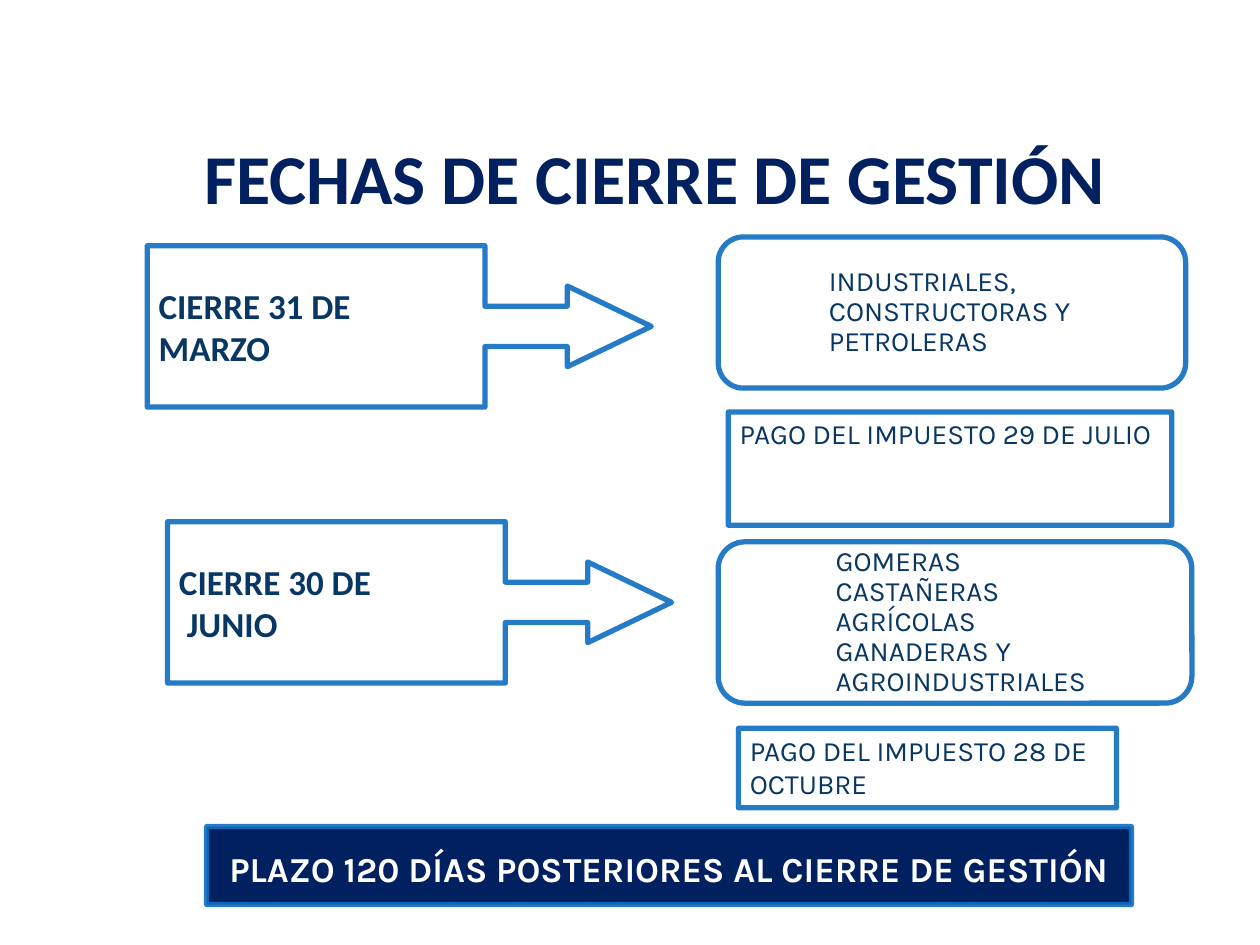
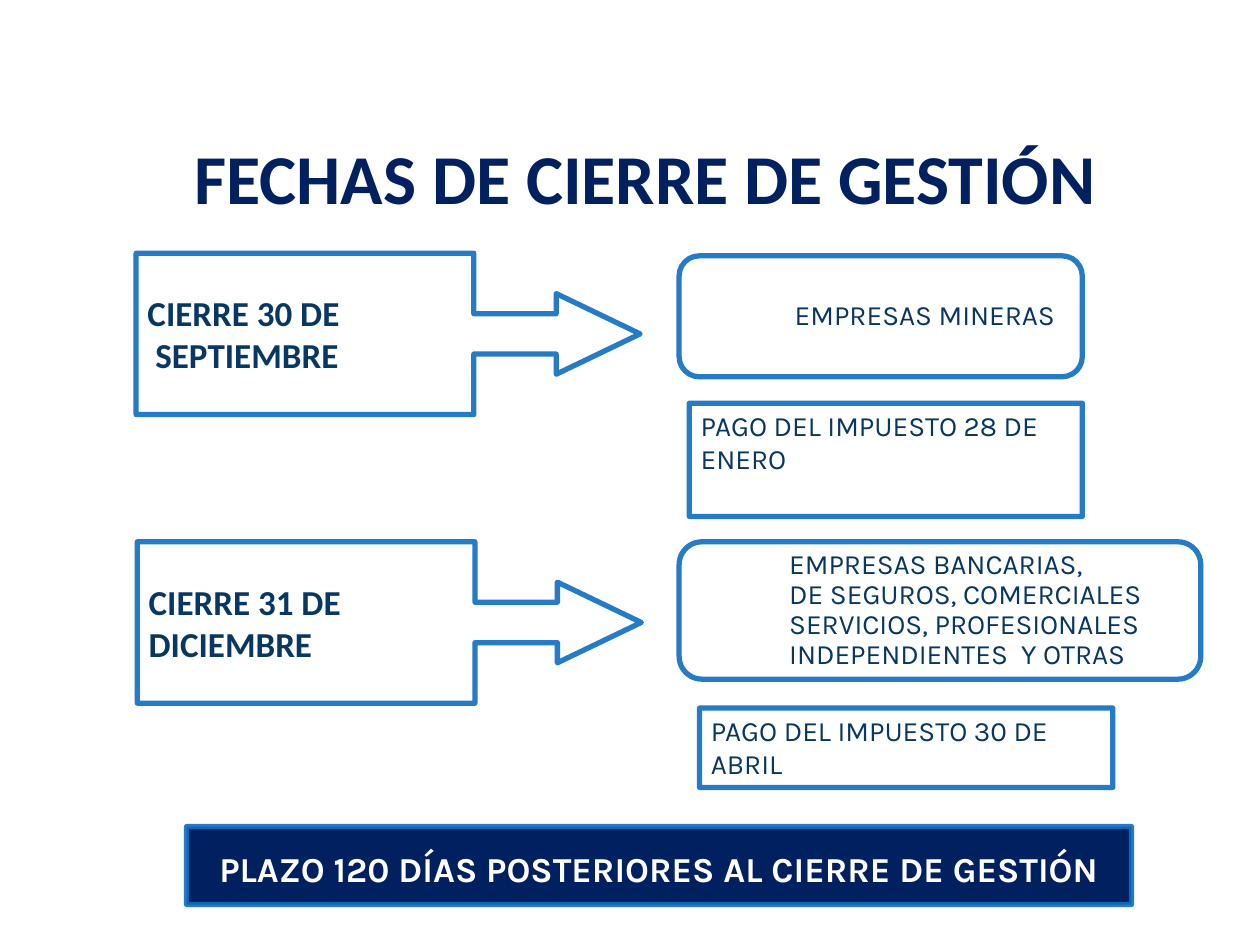
import pptx
import pptx.dml.color
import pptx.enum.shapes
import pptx.enum.text
import pptx.oxml.ns
import pptx.util
from lxml import etree

Pt = pptx.util.Pt
Shapes = pptx.enum.shapes.MSO_SHAPE
Align = pptx.enum.text.PP_ALIGN
Anchor = pptx.enum.text.MSO_ANCHOR

TITLE = "FECHAS DE CIERRE DE GESTIÓN"
DEADLINE = "PLAZO 120 DÍAS POSTERIORES AL CIERRE DE GESTIÓN"

SLIDES = [
    {
        "title_span": (95.8, 556.6),
        "deadline_span": (118.1, 528.5),
        "closings": [
            {
                "date": ["CIERRE 31 DE", "MARZO"],
                "date_at": (84.2, 140.4),
                "sectors": ["INDUSTRIALES,", "CONSTRUCTORAS Y", "PETROLERAS"],
                "sectors_box": (410.4, 135.4, 267.1, 86.4),
                "indent": 52.6,
                "payment": ["PAGO DEL IMPUESTO 29 DE JULIO"],
                "payment_top": 235.4,
                "payment_width": 253.4,
            },
            {
                "date": ["CIERRE 30 DE", " JUNIO"],
                "date_at": (95.8, 298.1),
                "sectors": ["GOMERAS", "CASTAÑERAS", "AGRÍCOLAS", "GANADERAS Y", "AGROINDUSTRIALES"],
                "sectors_box": (410.4, 309.6, 270.7, 92.2),
                "indent": 56.2,
                "payment": ["PAGO DEL IMPUESTO 28 DE", "OCTUBRE"],
                "payment_top": 416.2,
                "payment_width": 216,
            },
        ],
    },
    {
        "title_span": (67.7, 601.9),
        "deadline_span": (106.6, 540),
        "closings": [
            {
                "date": ["CIERRE 30 DE", " SEPTIEMBRE"],
                "date_at": (77.8, 144.7),
                "sectors": ["EMPRESAS MINERAS"],
                "sectors_box": (388.1, 146.2, 230.4, 69.1),
                "indent": 56.2,
                "payment": ["PAGO DEL IMPUESTO 28 DE ENERO"],
                "payment_top": 230.4,
                "payment_width": 224.6,
            },
            {
                "date": ["CIERRE 31 DE", "DICIEMBRE"],
                "date_at": (78.5, 309.6),
                "sectors": ["EMPRESAS BANCARIAS,", "DE SEGUROS, COMERCIALES",
                            "SERVICIOS, PROFESIONALES", "INDEPENDIENTES  Y OTRAS"],
                "sectors_box": (388.1, 309.6, 298.1, 78.5),
                "indent": 52.6,
                "payment": ["PAGO DEL IMPUESTO 30 DE ABRIL"],
                "payment_top": 404.6,
                "payment_width": 236.2,
            },
        ],
    },
]


def color(value):
    return pptx.dml.color.RGBColor.from_string(value)


THEME = {
    "navy": color("002060"),
    "outline": color("0F6DC2"),
    "outline_width": Pt(3),
    "outline_opacity": "90000",
    "title": {"name": "Calibri", "size": Pt(40), "bold": True, "color": color("002060")},
    "date": {"name": "Calibri", "size": Pt(20), "bold": True, "color": color("083763")},
    "body": {"name": "Karla", "size": Pt(16), "bold": False, "color": color("083763")},
    "deadline": {"name": "Karla", "size": Pt(20), "bold": True, "color": color("FFFFFF")},
}

CALLOUT_SIZE = (288, 92.2)
CALLOUT_ADJUSTMENTS = (0.25, 0.25, 0.52, 0.67)
PAYMENT_HEIGHTS = (64.8, 45.4)
PAYMENT_STEP = 5.8
TITLE_TOP, TITLE_HEIGHT = 73.4, 55.4
DEADLINE_TOP, DEADLINE_HEIGHT = 472.3, 44.6
BOX_MARGINS = (6.5, 2.9, 6.5, 2.9)
TITLE_MARGINS = (7.2, 3.6, 7.2, 3.6)
DEADLINE_MARGINS = (7.2, 9.6, 7.2, 3.6)


def write(shape, lines, style, margins=BOX_MARGINS, anchor=Anchor.MIDDLE,
          alignment=Align.LEFT, spacing=1.0, indent=0, wrap=False):
    frame = shape.text_frame
    left, top, right, bottom = (Pt(margin) for margin in margins)
    formats = {"margin_left": left, "margin_top": top, "margin_right": right,
               "margin_bottom": bottom, "vertical_anchor": anchor, "word_wrap": wrap}
    for name, value in formats.items():
        setattr(frame, name, value)
    for index, line in enumerate(lines):
        paragraph = frame.paragraphs[0] if index == 0 else frame.add_paragraph()
        run = paragraph.add_run()
        run.text = line
        for name, value in {"alignment": alignment, "line_spacing": spacing}.items():
            setattr(paragraph, name, value)
        if indent:
            properties = paragraph._p.get_or_add_pPr()
            properties.set("marL", str(int(Pt(indent))))
            properties.set("indent", "0")
        for name, value in style.items():
            if name == "color":
                run.font.color.rgb = value
            else:
                setattr(run.font, name, value)


def add_box(slide, kind, bounds, fill=None):
    shape = slide.shapes.add_shape(kind, *(Pt(length) for length in bounds))
    shape.shadow.inherit = False
    if fill is None:
        shape.fill.background()
    else:
        shape.fill.solid()
        shape.fill.fore_color.rgb = fill
    shape.line.color.rgb = THEME["outline"]
    shape.line.width = THEME["outline_width"]
    line_color = shape.line._ln.find(".//" + pptx.oxml.ns.qn("a:srgbClr"))
    alpha = etree.SubElement(line_color, pptx.oxml.ns.qn("a:alpha"))
    alpha.set("val", THEME["outline_opacity"])
    return shape


def add_closing(slide, position, closing):
    callout = add_box(slide, Shapes.RIGHT_ARROW_CALLOUT, closing["date_at"] + CALLOUT_SIZE)
    for index, value in enumerate(CALLOUT_ADJUSTMENTS):
        callout.adjustments[index] = value
    write(callout, closing["date"], THEME["date"])

    sectors = add_box(slide, Shapes.FLOWCHART_ALTERNATE_PROCESS, closing["sectors_box"])
    write(sectors, closing["sectors"], THEME["body"], spacing=0.9, indent=closing["indent"])

    payment_left = closing["sectors_box"][0] + PAYMENT_STEP * (position + 1)
    payment = add_box(slide, Shapes.RECTANGLE, (
        payment_left, closing["payment_top"], closing["payment_width"], PAYMENT_HEIGHTS[position]))
    write(payment, closing["payment"], THEME["body"], anchor=Anchor.TOP, wrap=True)


def add_title(slide, left, width):
    title = slide.shapes.add_textbox(Pt(left), Pt(TITLE_TOP), Pt(width), Pt(TITLE_HEIGHT))
    write(title, [TITLE], THEME["title"], TITLE_MARGINS, Anchor.TOP, Align.CENTER, wrap=True)


def add_deadline(slide, left, width):
    bounds = (left, DEADLINE_TOP, width, DEADLINE_HEIGHT)
    banner = add_box(slide, Shapes.RECTANGLE, bounds, THEME["navy"])
    write(banner, [DEADLINE], THEME["deadline"], DEADLINE_MARGINS,
          alignment=Align.CENTER, spacing=0.9)


def main():
    presentation = pptx.Presentation()
    presentation.slide_width = Pt(720)
    presentation.slide_height = Pt(540)
    for content in SLIDES:
        slide = presentation.slides.add_slide(presentation.slide_layouts[6])
        add_title(slide, *content["title_span"])
        for position, closing in enumerate(content["closings"]):
            add_closing(slide, position, closing)
        add_deadline(slide, *content["deadline_span"])
    presentation.save("out.pptx")


if __name__ == "__main__":
    main()
